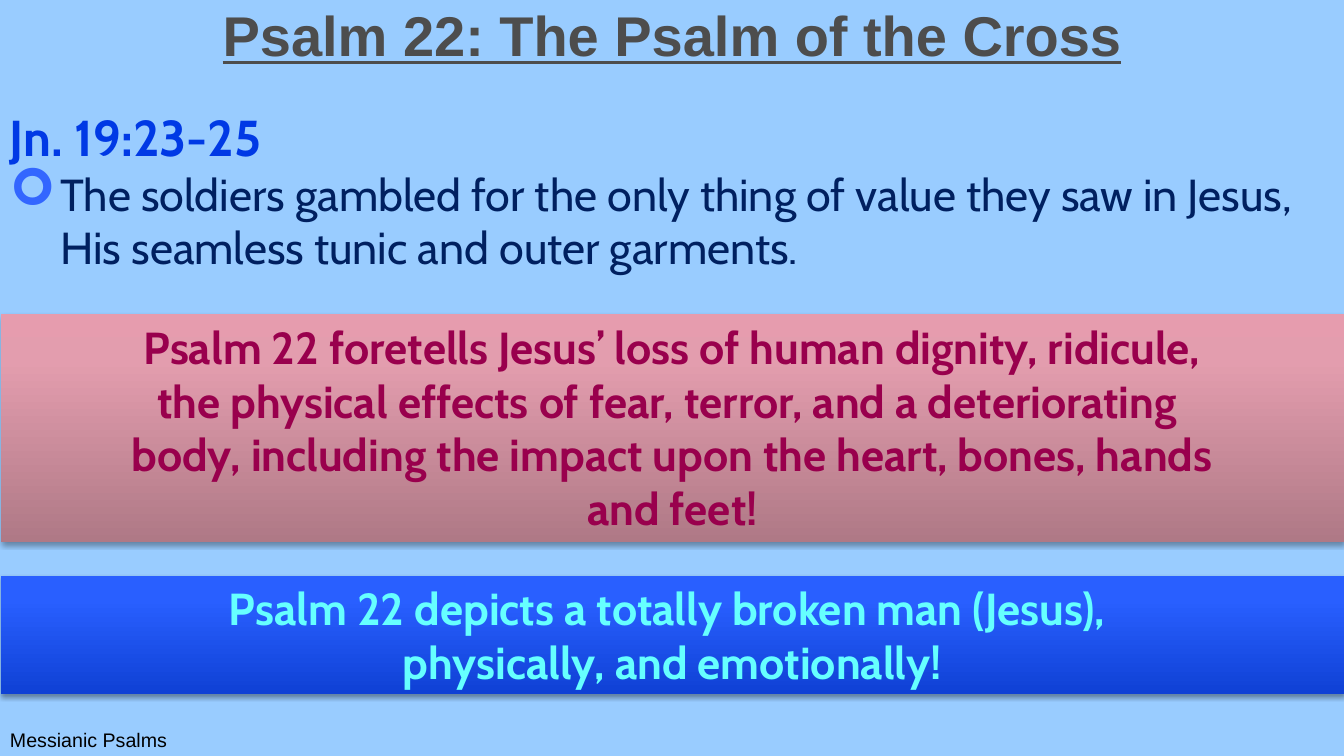
from copy import deepcopy
from lxml.etree import SubElement as Sub
from pptx import Presentation
from pptx.dml.color import RGBColor
from pptx.enum.shapes import MSO_SHAPE as Kind
from pptx.enum.text import MSO_ANCHOR as Anchor, MSO_AUTO_SIZE as Auto, PP_ALIGN as Align
from pptx.oxml.ns import qn
from pptx.util import Inches, Pt

# Content
TITLE = "Psalm 22: The Psalm of the Cross"
VERSE = "Jn. 19:23-25"
POINT = ("The soldiers gambled for the only thing of value they saw in Jesus, "
         "His seamless tunic and outer garments.")
FOOT = "Messianic Psalms"
WIDE, HIGH = 13.33, 7.5
BANDS = [  # top, height, text colour, gradient stops, lines
    (3.12, 2.26, "99004D", [(0, "AF7986"), (0.8, "E39DAE"), (1, "E69CAE")],
     ["Psalm 22 foretells Jesus’ loss of human dignity, ridicule,",
      "the physical effects of fear, terror, and a deteriorating ",
      "body, including the impact upon the heart, bones, hands",
      "and feet!"]),
    (5.71, 1.18, "66FFFF", [(0, "0F41D5"), (0.8, "295FFF"), (1, "2B60FF")],
     ["Psalm 22 depicts a totally broken man (Jesus), ",
      "physically, and emotionally!"]),
]


def rgb(code):
    return RGBColor.from_string(code)


def style(para, size, code, face="Cabin", bold=False, line=None):
    font = para.font
    font.size, font.name, font.bold, font.underline = Pt(size), face, bold, line
    font.color.rgb = rgb(code)


def hang(para):
    props = para._p.get_or_add_pPr()
    props.set("marL", str(Inches(0.5)))
    props.set("indent", str(-Inches(0.5)))
    return props


def bullet(para, mark, code, size):
    props = hang(para)
    Sub(Sub(props, qn("a:buClr")), qn("a:srgbClr"), val=code)
    Sub(props, qn("a:buSzPct"), val=str(size * 1000))
    Sub(props, qn("a:buFont"), typeface="Wingdings")
    Sub(props, qn("a:buChar"), char=mark)


def shade(shape, stops):
    fill = shape.fill
    fill.gradient()
    fill.gradient_angle = 90
    last = fill.gradient_stops[1]._gs
    last.addnext(deepcopy(last))
    for stop, (pos, code) in zip(fill.gradient_stops, stops):
        stop.position, stop.color.rgb = pos, rgb(code)


def drop(shape):
    shape.shadow.inherit = False
    effects = shape._element.spPr.find(qn("a:effectLst"))
    outer = Sub(effects, qn("a:outerShdw"), blurRad=str(Pt(3.1)),
                dist=str(Pt(1.8)), dir="5400000", rotWithShape="0")
    tint = Sub(outer, qn("a:srgbClr"), val="000000")
    Sub(tint, qn("a:alpha"), val="35000")


def textbox(left, top, width, height):
    frame = slide.shapes.add_textbox(*map(Inches, (left, top, width, height))).text_frame
    frame.word_wrap = True
    return frame


# Slide
deck = Presentation()
deck.slide_width, deck.slide_height = Inches(WIDE), Inches(HIGH)
slide = deck.slides.add_slide(deck.slide_layouts[5])
slide.background.fill.solid()
slide.background.fill.fore_color.rgb = rgb("99CCFF")

# Title
head = slide.shapes.title
head.left, head.top, head.width, head.height = map(Inches, (0, 0, WIDE, 0.67))
frame = head.text_frame
frame.text, frame.vertical_anchor, frame.auto_size = TITLE, Anchor.MIDDLE, Auto.NONE
frame.paragraphs[0].alignment = Align.CENTER
style(frame.paragraphs[0], 40, "4D4D4D", "Arial", True, True)

# Footer
frame = textbox(0, 7.17, 3.92, 0.33)
frame.text = FOOT
style(frame.paragraphs[0], 14, "000000", "Arial")

# Verse and point
frame = textbox(0, 1, WIDE, 1.78)
frame.text = f"{VERSE}\n{POINT}"
verse, point = frame.paragraphs
hang(verse)
style(verse, 36, "0039E5", bold=True)
bullet(point, "➢", "3366FF", 115)
style(point, 32, "002060")

# Bands
for top, height, code, stops, lines in BANDS:
    band = slide.shapes.add_shape(
        Kind.RECTANGLE, *map(Inches, (0.01, top, WIDE - 0.01, height)))
    shade(band, stops)
    band.line.fill.background()
    drop(band)
    frame = band.text_frame
    frame.word_wrap, frame.vertical_anchor = True, Anchor.TOP
    frame.text = "\n".join(lines)
    for para in frame.paragraphs:
        hang(para)
        para.alignment = Align.CENTER
        style(para, 32, code, bold=True)

deck.save("out.pptx")
